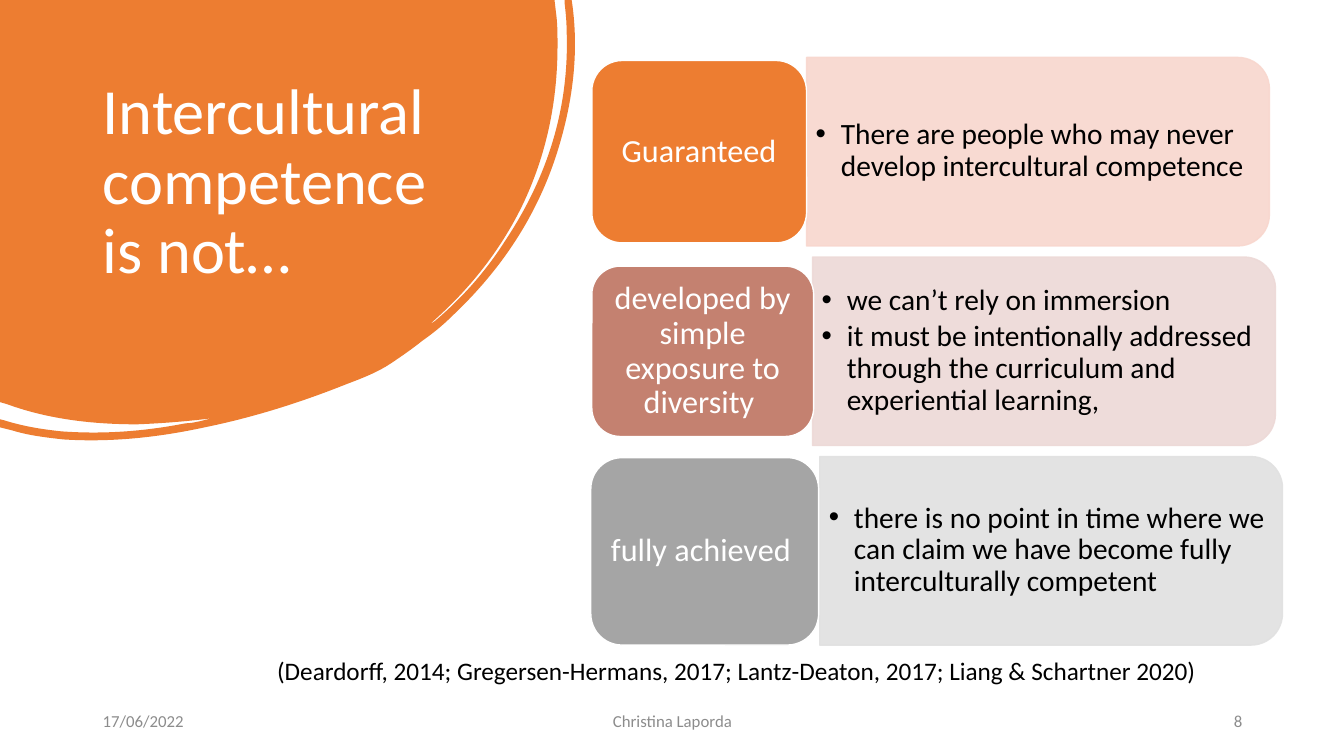
from lxml import etree
from pptx import Presentation
from pptx.dml.color import RGBColor
from pptx.enum.shapes import MSO_SHAPE
from pptx.enum.text import MSO_ANCHOR, PP_ALIGN
from pptx.oxml.ns import qn
from pptx.util import Inches, Pt

ROUNDED, TOP_ROUNDED = MSO_SHAPE.ROUNDED_RECTANGLE, MSO_SHAPE.ROUND_2_SAME_RECTANGLE
TOP, MIDDLE = MSO_ANCHOR.TOP, MSO_ANCHOR.MIDDLE
LEFT, CENTER, RIGHT = PP_ALIGN.LEFT, PP_ALIGN.CENTER, PP_ALIGN.RIGHT

FONT = "Calibri"
ORANGE, WHITE, BLACK, GREY = "ED7D31", "FFFFFF", "000000", "8C8C8C"

# Each row: label, label box, label colour, panel left, panel colour, points
ROWS = [
    ("Guaranteed", (5.87, 0.6, 2.13, 1.81), ORANGE, 8.0, "F8D7CE",
     ["There are people who may never develop intercultural competence"]),
    ("developed by simple exposure to diversity ", (5.87, 2.64, 2.2, 1.69), "C48170",
     8.06, "EDD9D7",
     ["we can’t rely on immersion",
      "it must be intentionally addressed through the curriculum and "
      "experiential learning,"]),
    ("fully achieved ", (5.86, 4.54, 2.26, 1.86), "A5A5A5", 8.13, "E1E1E1",
     ["there is no point in time where we can claim we have become fully "
      "interculturally competent"]),
]
PANEL_TOP, PANEL_PITCH = 0.57, 1.98
PANEL_WIDTH, PANEL_HEIGHT = 4.59, 1.87

FOOTER = [
    ("17/06/2022", 0.92, 3, LEFT),
    ("Christina Laporda", 4.42, 4.5, CENTER),
    ("8", 9.42, 3, RIGHT),
]

# Blob outline: two numbers are a line end, six are a cubic curve
BLOB_WIDTH, BLOB_HEIGHT = 5.71, 4.37
BLOB = [
    (0, 0), (5.5, 0), (5.52, 0.17),
    (5.53, 0.26, 5.53, 0.36, 5.53, 0.45),
    (5.53, 1.01, 5.42, 1.54, 5.18, 2.04),
    (4.96, 2.49, 4.65, 2.88, 4.27, 3.21),
    (4.29, 3.21, 4.3, 3.19, 4.32, 3.18),
    (4.59, 2.95, 4.82, 2.69, 5.01, 2.39),
    (5.43, 1.76, 5.65, 1.07, 5.62, 0.3),
    (5.62, 0.21, 5.61, 0.12, 5.6, 0.03),
    (5.6, 0), (5.67, 0), (5.68, 0.07),
    (5.74, 0.54, 5.68, 1.02, 5.53, 1.5),
    (5.33, 2.14, 4.97, 2.68, 4.48, 3.14),
    (4.39, 3.23, 4.29, 3.31, 4.19, 3.38),
    (4.09, 3.46, 3.99, 3.53, 3.87, 3.61),
    (3.75, 3.69, 3.6, 3.75, 3.44, 3.81),
    (2.99, 3.99, 2.52, 4.14, 2.03, 4.24),
    (1.57, 4.34, 1.1, 4.39, 0.63, 4.36),
    (0.45, 4.34, 0.28, 4.32, 0.12, 4.27),
    (0, 4.24), (0, 4.16), (0.04, 4.17),
    (0.23, 4.23, 0.42, 4.26, 0.61, 4.28),
    (1.03, 4.31, 1.43, 4.28, 1.84, 4.2),
    (1.89, 4.2, 1.93, 4.19, 1.98, 4.18),
    (2.02, 4.17, 2.06, 4.16, 2.1, 4.15),
    (1.86, 4.18, 1.61, 4.2, 1.36, 4.21),
    (0.92, 4.21, 0.48, 4.16, 0.07, 4.01),
    (0, 3.99),
]


def rgb(color):
    return RGBColor.from_string(color)


def paint(shape, fill, line=None):
    shape.shadow.inherit = False
    shape.fill.solid()
    shape.fill.fore_color.rgb = rgb(fill)
    if line:
        shape.line.color.rgb = rgb(line)
        shape.line.width = Pt(1)
    else:
        shape.line.fill.background()


def set_opacity(shape, percent):
    for color in shape.fill._xPr.iter(qn("a:srgbClr")):
        etree.SubElement(color, qn("a:alpha"), val=str(percent * 1000))


def add_bullet(paragraph, indent):
    properties = paragraph._p.get_or_add_pPr()
    properties.set("marL", str(Inches(indent)))
    properties.set("indent", str(-Inches(indent)))
    etree.SubElement(properties, qn("a:buFont"), typeface="Arial")
    etree.SubElement(properties, qn("a:buChar"), char="•")


def write(shape, texts, size, color, align=LEFT, anchor=MIDDLE, inset=(0.1, 0.05),
          spacing=1.0, after=0, bullets=False):
    frame = shape.text_frame
    across, down = Inches(inset[0]), Inches(inset[1])
    frame_format = {
        "word_wrap": True, "vertical_anchor": anchor,
        "margin_left": across, "margin_right": across,
        "margin_top": down, "margin_bottom": down,
    }
    for name, value in frame_format.items():
        setattr(frame, name, value)
    paragraph_format = {
        "alignment": align, "line_spacing": spacing, "space_after": Pt(after),
    }
    for index, text in enumerate(texts):
        paragraph = frame.add_paragraph() if index else frame.paragraphs[0]
        for name, value in paragraph_format.items():
            setattr(paragraph, name, value)
        if bullets:
            add_bullet(paragraph, 0.25)
        run = paragraph.add_run()
        run.text = text
        run.font.name, run.font.size = FONT, Pt(size)
        run.font.color.rgb = rgb(color)


def add_text(slide, box, texts, size, color, **layout):
    textbox = slide.shapes.add_textbox(*map(Inches, box))
    write(textbox, texts, size, color, **layout)


def add_blob(slide):
    ends = [(Inches(segment[-2]), Inches(segment[-1])) for segment in BLOB]
    builder = slide.shapes.build_freeform(*ends[0])
    builder.add_line_segments(ends[1:], close=True)
    blob = builder.convert_to_shape()
    paint(blob, ORANGE)

    # Room for the curves that reach beyond their ends
    blob.width, blob.height = Inches(BLOB_WIDTH), Inches(BLOB_HEIGHT)
    outline = next(blob._element.iter(qn("a:path")))
    outline.set("w", str(blob.width))
    outline.set("h", str(blob.height))

    # Bend the segments that have control points
    for segment, line in zip(BLOB[1:], list(outline.iter(qn("a:lnTo")))):
        if len(segment) == 6:
            curve = etree.Element(qn("a:cubicBezTo"))
            for x, y in zip(segment[::2], segment[1::2]):
                etree.SubElement(curve, qn("a:pt"), x=str(Inches(x)), y=str(Inches(y)))
            outline.replace(line, curve)


def add_panel(slide, left, top, color, points):
    # The upright shape is turned a quarter about its centre
    turn = (PANEL_WIDTH - PANEL_HEIGHT) / 2
    panel = slide.shapes.add_shape(
        TOP_ROUNDED, Inches(left + turn), Inches(top - turn),
        Inches(PANEL_HEIGHT), Inches(PANEL_WIDTH))
    panel.rotation = 90
    paint(panel, color, color)
    set_opacity(panel, 90)
    add_text(slide, (left, top + 0.09, 4.53, 1.68), points, 21, BLACK,
             inset=(0.09, 0.04), spacing=0.9, after=3.15, bullets=True)


def add_label(slide, box, color, text):
    label = slide.shapes.add_shape(ROUNDED, *map(Inches, box))
    paint(label, color, WHITE)
    write(label, [text], 23, WHITE, align=CENTER, spacing=0.9, inset=(0.09, 0.05))


def main():
    deck = Presentation()
    deck.slide_width, deck.slide_height = Inches(13.33), Inches(7.5)
    slide = deck.slides.add_slide(deck.slide_layouts[6])

    # Title on its blob
    add_blob(slide)
    add_text(slide, (0.92, 0.71, 3.52, 2.22), ["Intercultural competence is not…"],
             46, WHITE, spacing=0.9)

    # Labels with their explanations
    for index, (text, box, color, left, tint, points) in enumerate(ROWS):
        add_panel(slide, left, PANEL_TOP + index * PANEL_PITCH, tint, points)
        add_label(slide, box, color, text)

    # Footer and citation
    for text, left, width, align in FOOTER:
        add_text(slide, (left, 6.95, width, 0.4), [text], 12, GREY, align=align)
    add_text(slide, (2.65, 6.45, 10.22, 0.4),
             ["(Deardorff, 2014; Gregersen-Hermans, 2017; Lantz-Deaton, 2017; "
              "Liang & Schartner 2020)"], 18, BLACK, anchor=TOP)

    deck.save("out.pptx")


if __name__ == "__main__":
    main()
